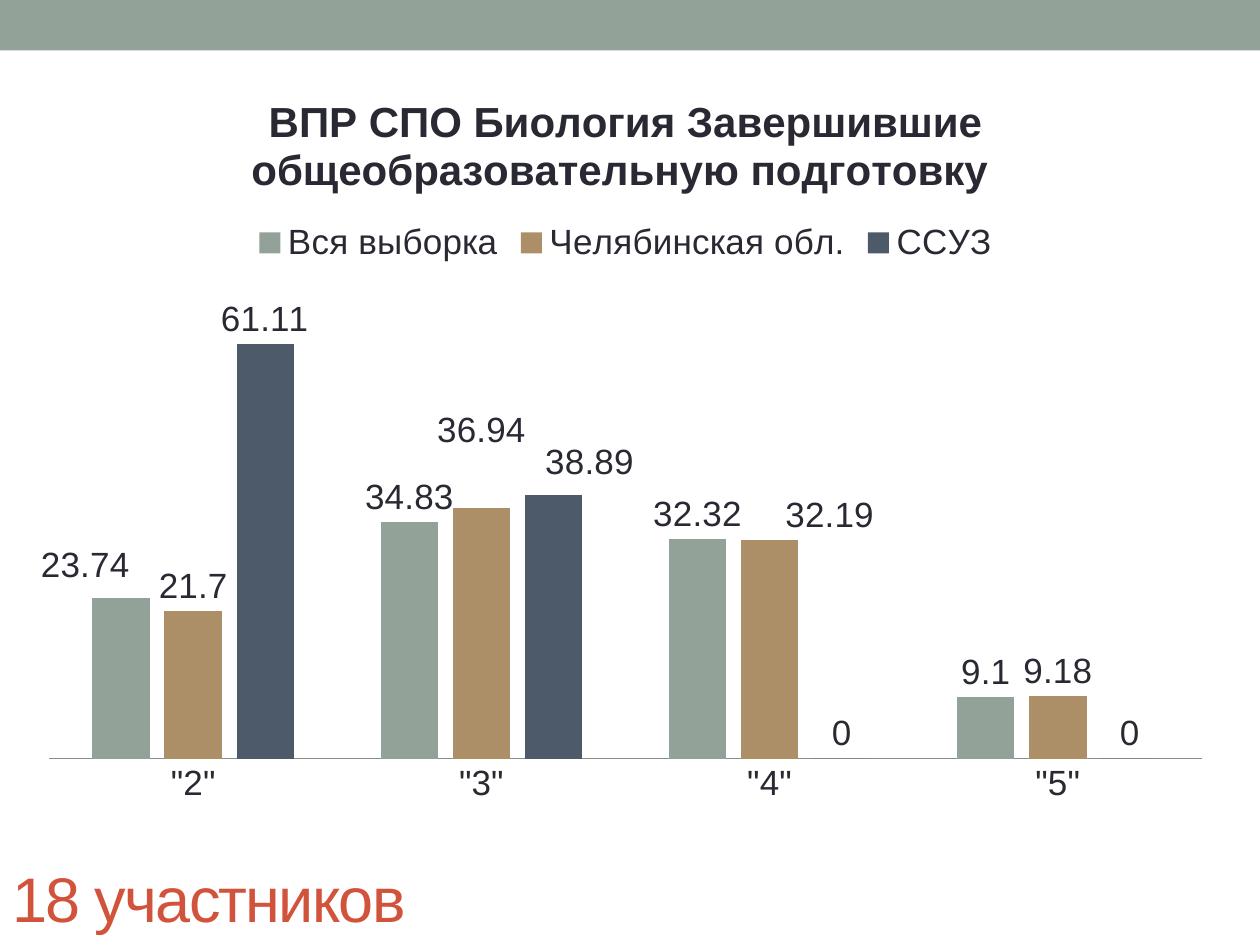
from lxml import etree
from pptx import Presentation
from pptx import util as u
from pptx.chart.data import CategoryChartData
from pptx.dml.color import RGBColor
from pptx.enum import chart as ch, shapes, text
from pptx.oxml.ns import qn

SAGE = RGBColor(0x93, 0xA2, 0x99)
TAN = RGBColor(0xAD, 0x8F, 0x67)
SLATE = RGBColor(0x4C, 0x5A, 0x6A)
RED = RGBColor(0xD2, 0x53, 0x3C)
INK = RGBColor(0x29, 0x29, 0x34)
GRAY = RGBColor(0x8C, 0x8C, 0x8C)
FONT = "Arial"

CATEGORIES = ['"2"', '"3"', '"4"', '"5"']
# name, colour, values, label shifts {point: (x, y)} as shares of the chart
SERIES = [
    ("Вся выборка", SAGE, (23.74, 34.83, 32.32, 9.1), {0: (-0.03, -0.01)}),
    ("Челябинская обл.", TAN, (21.7, 36.94, 32.19, 9.18),
     {1: (0, -0.07), 2: (0.05, 0)}),
    ("ССУЗ", SLATE, (61.11, 38.89, 0, 0), {1: (0.03, -0.01)}),
]


def add_layout(parent, index, **values):
    """Insert a manual chart layout as the given child of parent."""
    layout = etree.Element(qn("c:layout"))
    manual = etree.SubElement(layout, qn("c:manualLayout"))
    for tag, value in values.items():
        etree.SubElement(manual, qn("c:" + tag)).set("val", str(value))
    parent.insert(index, layout)


prs = Presentation()
prs.slide_width, prs.slide_height = u.Inches(10), u.Inches(7.5)
W, H = prs.slide_width, prs.slide_height
s = prs.slides.add_slide(prs.slide_layouts[5])

# Top band
band = s.shapes.add_shape(shapes.MSO_SHAPE.RECTANGLE, 0, 0, W, u.Inches(0.4))
band.shadow.inherit = False
band.fill.solid()
band.fill.fore_color.rgb = SAGE
band.line.fill.background()

# Title
title = s.shapes.title
title.left, title.top = 0, u.Inches(6.74)
title.width, title.height = int(W * 0.35), H - u.Inches(6.74)
tf = title.text_frame
tf.text = "18 участников"
tf.word_wrap = True
tf.auto_size = text.MSO_AUTO_SIZE.NONE
tf.vertical_anchor = text.MSO_ANCHOR.MIDDLE
p = tf.paragraphs[0]
p.alignment = text.PP_ALIGN.LEFT
p.font.name, p.font.size = FONT, u.Pt(36)
p.font.color.rgb = RED
p.runs[0].font._element.set("spc", "-100")

# Chart
data = CategoryChartData()
data.categories = CATEGORIES
for name, _, values, _ in SERIES:
    data.add_series(name, values)
chart = s.shapes.add_chart(
    ch.XL_CHART_TYPE.COLUMN_CLUSTERED, u.Inches(0.2), u.Inches(0.52),
    u.Inches(9.53), u.Inches(5.98), data).chart
chart.font.name, chart.font.size = FONT, u.Pt(20)
chart.font.color.rgb = INK

chart.has_title = True
chart.chart_title.include_in_layout = False
tf = chart.chart_title.text_frame
tf.text = "ВПР СПО Биология Завершившие общеобразовательную подготовку "
p = tf.paragraphs[0]
p.font.name, p.font.size, p.font.bold = FONT, u.Pt(24), True
p.font.color.rgb = INK

chart.has_legend = True
chart.legend.position = ch.XL_LEGEND_POSITION.TOP
chart.legend.include_in_layout = False

axis = chart.value_axis
axis.visible = False
axis.has_major_gridlines = False
axis.minimum_scale, axis.maximum_scale = 0, 70
axis = chart.category_axis
axis.major_tick_mark = ch.XL_TICK_MARK.NONE
axis.format.line.color.rgb = GRAY
axis.format.line.width = u.Pt(0.75)

plot = chart.plots[0]
plot.gap_width, plot.overlap = 150, -25
plot.vary_by_categories = False
for series, (_, color, _, shifts) in zip(plot.series, SERIES):
    series.format.fill.solid()
    series.format.fill.fore_color.rgb = color
    series.data_labels.show_value = True
    series.data_labels.position = ch.XL_LABEL_POSITION.OUTSIDE_END
    for i in shifts:
        series.points[i].data_label.position = ch.XL_LABEL_POSITION.OUTSIDE_END
    labels = series._element.findall(".//" + qn("c:dLbl"))
    for label, (x, y) in zip(labels, shifts.values()):
        add_layout(label, 1, x=x, y=y)
    for leader in series._element.findall(".//" + qn("c:showLeaderLines")):
        leader.set("val", "0")

area = chart._chartSpace.find(".//" + qn("c:plotArea"))
for old in area.findall(qn("c:layout")):
    area.remove(old)
add_layout(area, 0, layoutTarget="inner", xMode="edge", yMode="edge",
           x=0.02, y=0.29, w=0.96, h=0.63)

prs.save("out.pptx")
